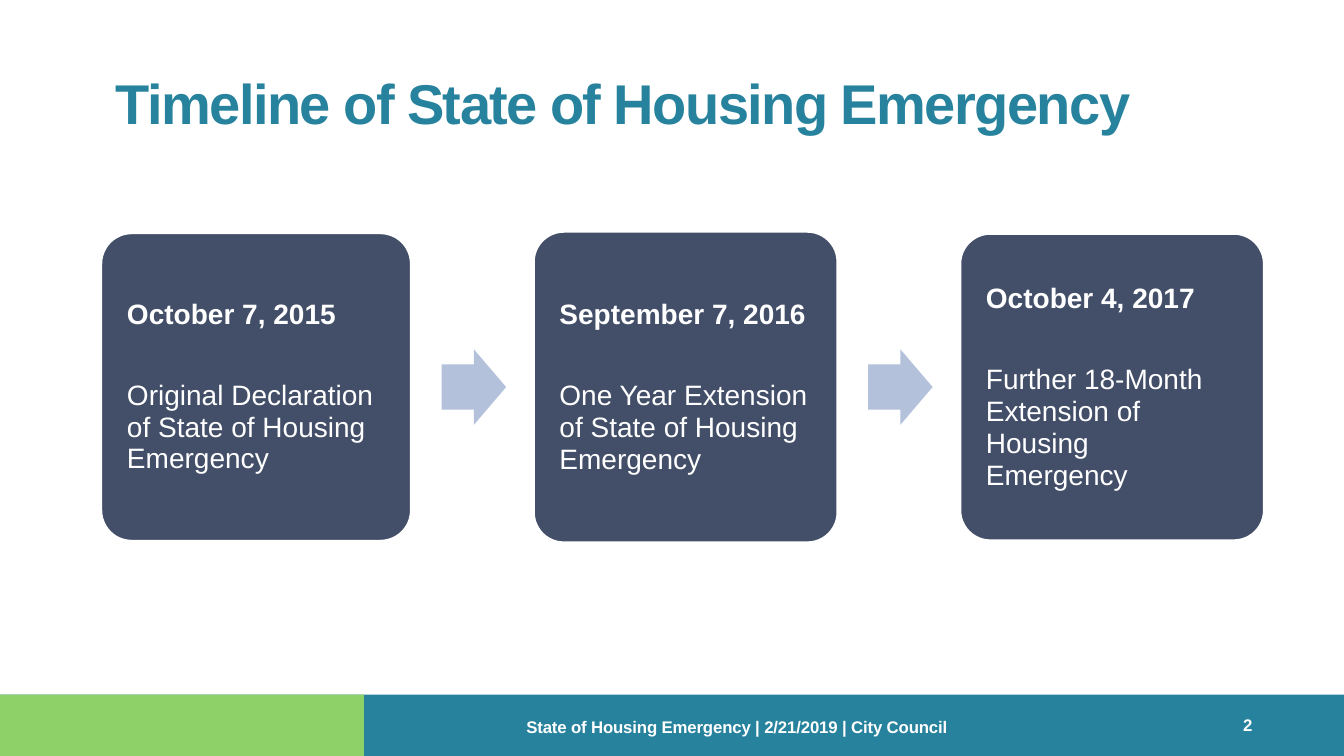
import pptx
import pptx.util
import pptx.dml.color
import pptx.enum.shapes
import pptx.enum.text

Inches, Pt = pptx.util.Inches, pptx.util.Pt
SHAPE = pptx.enum.shapes.MSO_SHAPE
ANCHOR = pptx.enum.text.MSO_ANCHOR
LEFT = pptx.enum.text.PP_ALIGN.LEFT

TITLE = "Timeline of State of Housing Emergency"
FOOTER = "State of Housing Emergency | 2/21/2019 | City Council"
PAGE = "2"
# date, event, left, width, height
STEPS = [
    ("October 7, 2015", "Original Declaration of State of Housing Emergency", 1, 3.08, 3.06),
    ("September 7, 2016", "One Year Extension of State of Housing Emergency", 5.29, 3.02, 3.09),
    ("October 4, 2017", "Further 18-Month Extension of Housing Emergency", 9.52, 3.02, 3.05),
]
COLORS = {"teal": "27829D", "green": "8FD169", "card": "434F69",
          "arrow": "B3C1DB", "white": "FFFFFF"}
WIDTH, HEIGHT = 13.33, 7.5
BAND_TOP = 6.89
MID_Y = 3.84
ARROW_GAP, ARROW_W, ARROW_H = 0.3, 0.64, 0.75


def rgb(name):
    return pptx.dml.color.RGBColor.from_string(COLORS[name])


def add_shape(s, kind, color, left, top, width, height):
    sp = s.shapes.add_shape(kind, Inches(left), Inches(top), Inches(width), Inches(height))
    sp.shadow.inherit = False
    sp.fill.solid()
    sp.fill.fore_color.rgb = rgb(color)
    sp.line.fill.background()
    return sp


def set_insets(tf, left, top, right, bottom):
    tf.margin_left, tf.margin_top = Inches(left), Inches(top)
    tf.margin_right, tf.margin_bottom = Inches(right), Inches(bottom)
    tf.word_wrap = True


def write(p, text, size, color="white", bold=True, spacing=0):
    """Fill a paragraph; spacing is in hundredths of a point between letters."""
    r = p.add_run()
    r.text = text
    if spacing:
        r.font._element.set("spc", str(spacing))
    p.alignment = LEFT
    p.font.name = "Arial"
    p.font.size = Pt(size)
    p.font.bold = bold
    p.font.color.rgb = rgb(color)


def add_label(s, text, left, top, width, height, spacing=0):
    sp = s.shapes.add_textbox(Inches(left), Inches(top), Inches(width), Inches(height))
    set_insets(sp.text_frame, 0.02, 0.01, 0, 0)
    p = sp.text_frame.paragraphs[0]
    write(p, text, 12, spacing=spacing)
    return p


def add_card(s, date, event, left, width, height):
    sp = add_shape(s, SHAPE.ROUNDED_RECTANGLE, "card",
                   left, MID_Y - height / 2, width, height)
    sp.adjustments[0] = 0.1
    sp.line.color.rgb = rgb("white")
    sp.line.width = Pt(2)
    tf = sp.text_frame
    set_insets(tf, 0.17, 0.17, 0.18, 0.17)
    tf.vertical_anchor = ANCHOR.MIDDLE
    write(tf.paragraphs[0], date, 20)
    write(tf.add_paragraph(), event, 20, bold=False)
    for p in tf.paragraphs:
        p.line_spacing = 0.95
    tf.paragraphs[0].space_after = Pt(35)


def main():
    prs = pptx.Presentation()
    prs.slide_width, prs.slide_height = Inches(WIDTH), Inches(HEIGHT)
    s = prs.slides.add_slide(prs.slide_layouts[5])

    for color, width in (("teal", WIDTH), ("green", 3.61)):
        add_shape(s, SHAPE.RECTANGLE, color, 0, BAND_TOP, width, HEIGHT - BAND_TOP)

    title = s.shapes.title
    title.left, title.top = Inches(1), Inches(0.66)
    title.width, title.height = Inches(11.92), Inches(0.69)
    set_insets(title.text_frame, 0.15, 0.01, 0, 0)
    title.text_frame.vertical_anchor = ANCHOR.MIDDLE
    write(title.text_frame.paragraphs[0], TITLE, 40, "teal", spacing=-110)

    add_label(s, PAGE, 12.31, 7.08, 0.23, 0.21)
    add_label(s, FOOTER, 5.2, 7.1, 6.67, 0.2, spacing=-10).line_spacing = Pt(14.2)

    for i, (date, event, left, width, height) in enumerate(STEPS):
        add_card(s, date, event, left, width, height)
        if i < len(STEPS) - 1:
            arrow = add_shape(s, SHAPE.RIGHT_ARROW, "arrow", left + width + ARROW_GAP,
                              MID_Y - ARROW_H / 2, ARROW_W, ARROW_H)
            arrow.adjustments[0] = 0.6
            arrow.adjustments[1] = 0.5

    prs.save("out.pptx")


if __name__ == "__main__":
    main()
